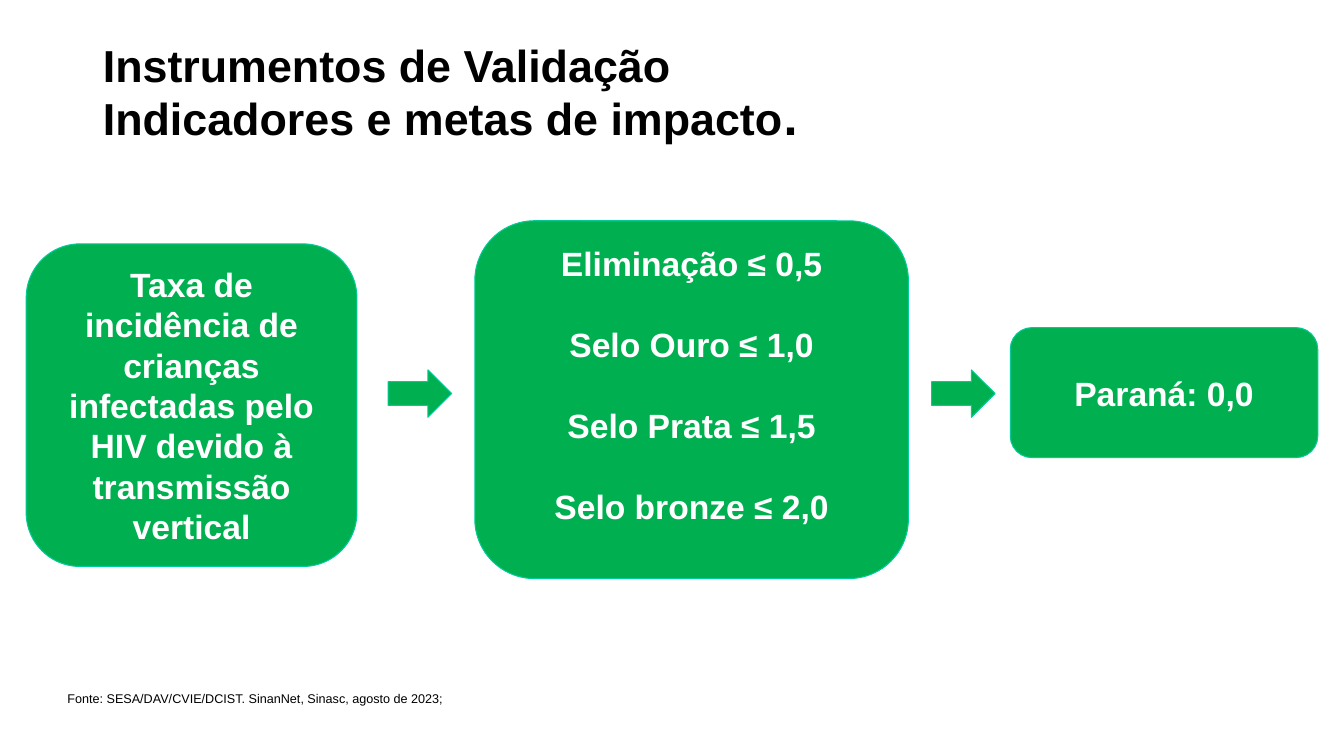
from pptx import Presentation
from pptx.dml.color import RGBColor
from pptx.enum.shapes import MSO_SHAPE
from pptx.enum.text import MSO_ANCHOR, PP_ALIGN
from pptx.util import Inches, Pt

ROUND, ARROW = MSO_SHAPE.ROUNDED_RECTANGLE, MSO_SHAPE.RIGHT_ARROW
TOP, MIDDLE = MSO_ANCHOR.TOP, MSO_ANCHOR.MIDDLE
LEFT, CENTER = PP_ALIGN.LEFT, PP_ALIGN.CENTER
COLORS = {"fill": "00B050", "line": "00CC99", "dark": "000000", "light": "FFFFFF"}


def set_font(font, size, color, bold=False):
    font.name = "Arial"
    font.size = Pt(size)
    font.bold = bold
    font.color.rgb = RGBColor.from_string(COLORS[color])


def add_green(kind, x, y, w, h):
    shape = slide.shapes.add_shape(kind, Inches(x), Inches(y), Inches(w), Inches(h))
    shape.shadow.inherit = False
    shape.fill.solid()
    shape.fill.fore_color.rgb = RGBColor.from_string(COLORS["fill"])
    shape.line.color.rgb = RGBColor.from_string(COLORS["line"])
    shape.line.width = Pt(0.75)
    return shape


prs = Presentation()
prs.slide_width, prs.slide_height = Inches(13.33), Inches(7.5)
slide = prs.slides.add_slide(prs.slide_layouts[5])

# Title
title = slide.shapes.title
title.left, title.top = Inches(0.92), Inches(0.4)
title.width, title.height = Inches(11.49), Inches(1.09)
frame = title.text_frame
frame.vertical_anchor = MIDDLE
frame.text = "Instrumentos de Validação\vIndicadores e metas de impacto"
head = frame.paragraphs[0]
head.alignment = LEFT
head.line_spacing = 0.9
head.add_run().text = "."
for run in head.runs:
    set_font(run.font, 32, "dark", True)
head.runs[-1].font.size = Pt(36)

# Indicator, targets and result
boxes = [
    (0.26, 2.42, 3.28, 3.2, MIDDLE,
     ["Taxa de incidência de crianças infectadas pelo HIV devido à transmissão vertical"]),
    (4.71, 2.19, 4.3, 3.55, TOP,
     ["Eliminação ≤ 0,5", "Selo Ouro ≤ 1,0", "Selo Prata ≤ 1,5", "Selo bronze ≤ 2,0"]),
    (10.02, 3.25, 3.05, 1.29, MIDDLE, ["Paraná: 0,0"]),
]
for x, y, w, h, anchor, lines in boxes:
    frame = add_green(ROUND, x, y, w, h).text_frame
    frame.word_wrap = True
    frame.vertical_anchor = anchor
    frame.text = "\n".join(lines)
    for i, para in enumerate(frame.paragraphs):
        para.alignment = CENTER
        if i:
            para.space_before = Pt(29)
        set_font(para.font, 24, "light", True)

# Arrows between the boxes
for x in (3.85, 9.24):
    add_green(ARROW, x, 3.67, 0.63, 0.47)

# Source line
note = slide.shapes.add_textbox(Inches(0.57), Inches(6.8), Inches(6.33), Inches(0.25))
frame = note.text_frame
frame.word_wrap = True
frame.text = "Fonte: SESA/DAV/CVIE/DCIST. SinanNet, Sinasc, agosto de 2023;"
set_font(frame.paragraphs[0].font, 9, "dark")

prs.save("out.pptx")
